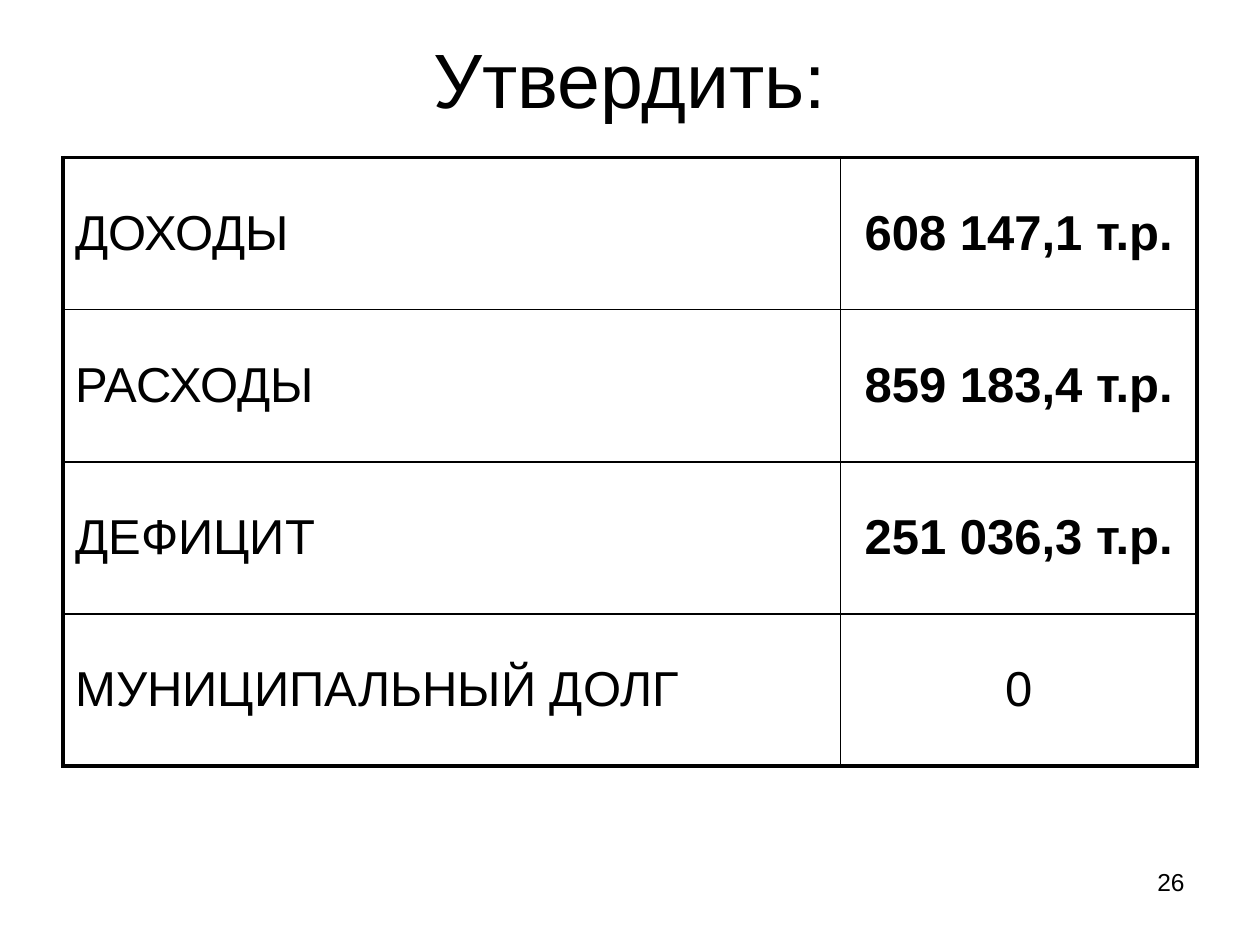
from dataclasses import dataclass

from lxml import etree
from pptx import Presentation
from pptx.dml.color import RGBColor
from pptx.enum.text import MSO_ANCHOR, PP_ALIGN
from pptx.oxml.ns import qn
from pptx.util import Inches, Pt

LEFT, CENTER, RIGHT = PP_ALIGN.LEFT, PP_ALIGN.CENTER, PP_ALIGN.RIGHT
MIDDLE = MSO_ANCHOR.MIDDLE
FONT = "Arial"
BLACK = "000000"
WHITE = "FFFFFF"
OUTER_LINE, INNER_LINE = 2.25, 1
COLUMN_WIDTHS = (6.17, 2.83)
TABLE_HEIGHT = 4.83


@dataclass
class BudgetItem:
    name: str
    amount: str
    bold: bool = True


ITEMS = [
    BudgetItem("ДОХОДЫ", "608 147,1 т.р."),
    BudgetItem("РАСХОДЫ", "859 183,4 т.р."),
    BudgetItem("ДЕФИЦИТ", "251 036,3 т.р."),
    BudgetItem("МУНИЦИПАЛЬНЫЙ ДОЛГ", "0", bold=False),
]


def color(value: str) -> RGBColor:
    return RGBColor.from_string(value)


def write(frame, text: str, size: float, align, bold: bool = False) -> None:
    frame.word_wrap = True
    paragraph = frame.paragraphs[0]
    paragraph.text = text
    paragraph.alignment = align
    paragraph.font.name = FONT
    paragraph.font.size = Pt(size)
    paragraph.font.bold = bold
    paragraph.font.color.rgb = color(BLACK)


def set_borders(cell, widths: dict[str, float]) -> None:
    properties = cell._tc.get_or_add_tcPr()
    for position, (side, width) in enumerate(widths.items()):
        line = etree.Element(qn(f"a:ln{side}"), w=str(Pt(width)))
        fill = etree.SubElement(line, qn("a:solidFill"))
        etree.SubElement(fill, qn("a:srgbClr"), val=BLACK)
        properties.insert(position, line)


def add_title(page, text: str) -> None:
    title = page.shapes.title
    title.left, title.top = Inches(0.5), Inches(0.33)
    title.width, title.height = Inches(9), Inches(0.58)
    title.text_frame.vertical_anchor = MIDDLE
    write(title.text_frame, text, 44, CENTER)


def add_budget_table(page, items: list[BudgetItem]) -> None:
    table = page.shapes.add_table(
        len(items), len(COLUMN_WIDTHS), Inches(0.5), Inches(1.25),
        Inches(sum(COLUMN_WIDTHS)), Inches(TABLE_HEIGHT),
    ).table
    table.first_row = table.horz_banding = False
    for column, width in zip(table.columns, COLUMN_WIDTHS):
        column.width = Inches(width)
    last_row, last_column = len(items) - 1, len(COLUMN_WIDTHS) - 1
    for row, item in enumerate(items):
        contents = ((item.name, LEFT, False), (item.amount, CENTER, item.bold))
        for column, (text, align, bold) in enumerate(contents):
            cell = table.cell(row, column)
            cell.vertical_anchor = MIDDLE
            cell.fill.solid()
            cell.fill.fore_color.rgb = color(WHITE)
            write(cell.text_frame, text, 28, align, bold)
            edges = {
                "L": column == 0,
                "R": column == last_column,
                "T": row == 0,
                "B": row == last_row,
            }
            set_borders(cell, {
                side: OUTER_LINE if outer else INNER_LINE
                for side, outer in edges.items()
            })


def add_page_number(page, number: str) -> None:
    box = page.shapes.add_textbox(
        Inches(7.17), Inches(6.83), Inches(2.33), Inches(0.52)
    )
    write(box.text_frame, number, 14, RIGHT)


def main() -> None:
    deck = Presentation()
    deck.slide_width, deck.slide_height = Inches(10), Inches(7.5)
    page = deck.slides.add_slide(deck.slide_layouts.get_by_name("Title Only"))
    add_title(page, "Утвердить:")
    add_budget_table(page, ITEMS)
    add_page_number(page, "26")
    deck.save("out.pptx")


if __name__ == "__main__":
    main()
